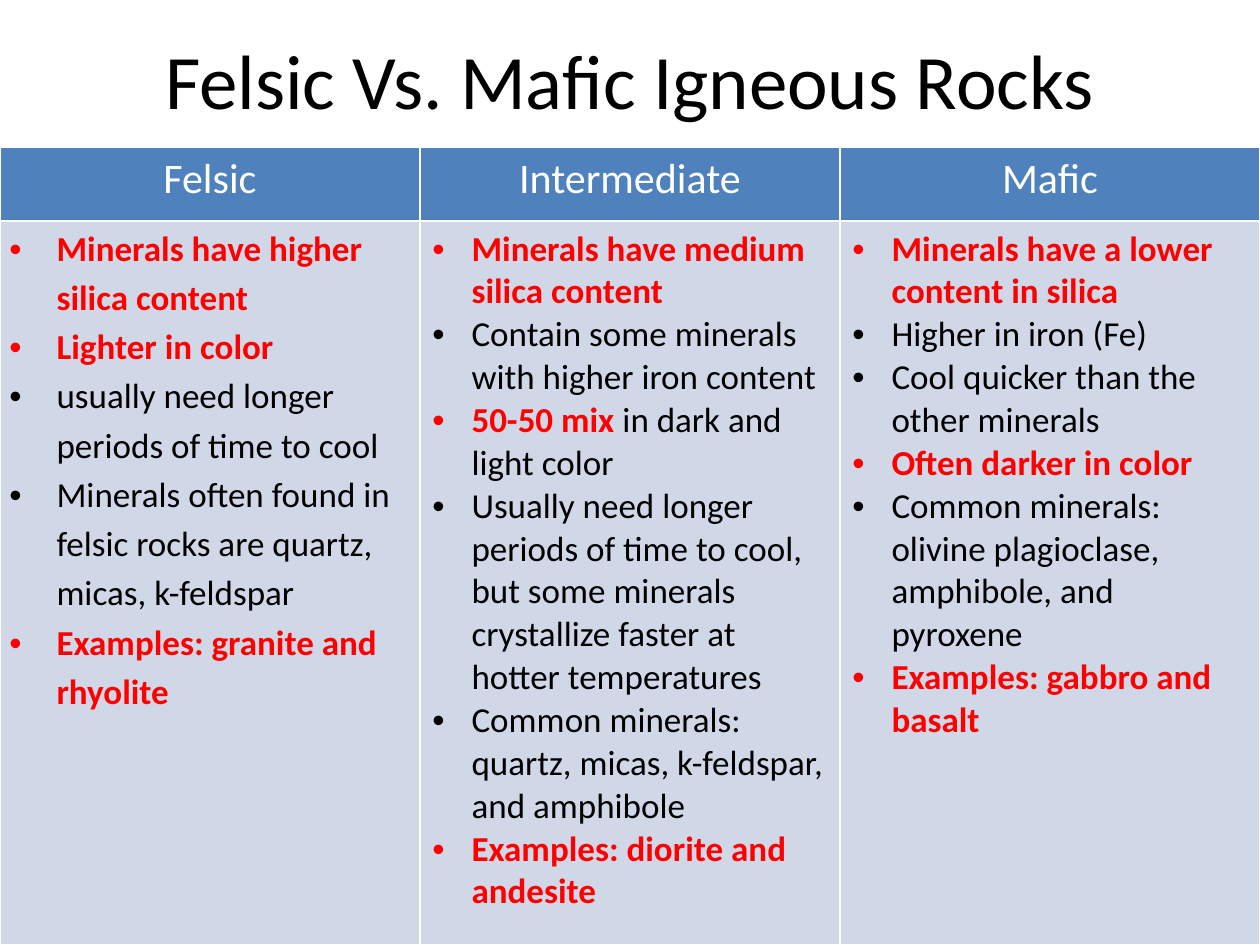
"""Build a slide with a table comparing felsic, intermediate and mafic rocks."""
from lxml import etree
from pptx import Presentation
from pptx.dml.color import RGBColor
from pptx.enum.text import MSO_ANCHOR, PP_ALIGN
from pptx.oxml.ns import qn
from pptx.util import Cm, Pt

CENTER, LEFT = PP_ALIGN.CENTER, PP_ALIGN.LEFT
MIDDLE = MSO_ANCHOR.MIDDLE
BLACK = RGBColor(0x00, 0x00, 0x00)
WHITE = RGBColor(0xFF, 0xFF, 0xFF)
RED = RGBColor(0xFF, 0x00, 0x00)
HEADER_BLUE = RGBColor(0x4F, 0x81, 0xBD)
BODY_BLUE = RGBColor(0xD0, 0xD8, 0xE8)
FONT = "Calibri"

TITLE = "Felsic Vs. Mafic Igneous Rocks"
KEY, PLAIN = True, False
ROCKS = [
    {"name": "Felsic", "indent": Cm(0.95), "spacing": 1.15, "margin": Cm(0.19), "top": Cm(0), "points": [
        [("Minerals have higher silica content", KEY)],
        [("Lighter in color", KEY)],
        [("usually need longer periods of time to cool", PLAIN)],
        [("Minerals often found in felsic rocks are quartz, micas, k-feldspar", PLAIN)],
        [("Examples: granite and rhyolite", KEY)],
    ]},
    {"name": "Intermediate", "indent": Cm(0.79), "spacing": 1.0, "margin": Cm(0.25), "top": Cm(0.13), "points": [
        [("Minerals have medium silica content", KEY)],
        [("Contain some minerals with higher iron content", PLAIN)],
        [("50-50 mix", KEY), (" in dark and light color", PLAIN)],
        [("Usually need longer periods of time to cool, but some minerals "
          "crystallize faster at hotter temperatures", PLAIN)],
        [("Common minerals: quartz, micas, k-feldspar, and amphibole", PLAIN)],
        [("Examples: diorite and andesite", KEY)],
    ]},
    {"name": "Mafic", "indent": Cm(0.79), "spacing": 1.0, "margin": Cm(0.25), "top": Cm(0.13), "points": [
        [("Minerals have a lower content in silica", KEY)],
        [("Higher in iron (Fe)", PLAIN)],
        [("Cool quicker than the other minerals", PLAIN)],
        [("Often darker in color", KEY)],
        [("Common minerals: olivine plagioclase, amphibole, and pyroxene", PLAIN)],
        [("Examples: gabbro and basalt", KEY)],
    ]},
]

SLIDE_WIDTH, SLIDE_HEIGHT = Cm(25.4), Cm(19.05)
TABLE_TOP, HEADER_HEIGHT = Cm(2.97), Cm(1.49)
BODY_HEIGHT = SLIDE_HEIGHT - TABLE_TOP - HEADER_HEIGHT


def add_text(paragraph, text, size=20, color=BLACK, bold=False, align=LEFT):
    paragraph.alignment = align
    run = paragraph.add_run()
    run.text = text
    run.font.name = FONT
    run.font.size = Pt(size)
    run.font.bold = bold
    run.font.color.rgb = color


def add_bullet(paragraph, indent):
    properties = paragraph._p.get_or_add_pPr()
    properties.set("marL", str(indent))
    properties.set("indent", str(-indent))
    etree.SubElement(properties, qn("a:buFont"), typeface="Arial")
    etree.SubElement(properties, qn("a:buChar"), char="•")


def add_borders(cell):
    properties = cell._tc.get_or_add_tcPr()
    for side in "LRTB":
        line = etree.SubElement(properties, qn(f"a:ln{side}"), w=str(Pt(1)))
        fill = etree.SubElement(line, qn("a:solidFill"))
        etree.SubElement(fill, qn("a:srgbClr"), val=str(WHITE))


def fill_cell(cell, color):
    cell.fill.solid()
    cell.fill.fore_color.rgb = color


def fill_body(cell, rock):
    add_borders(cell)
    fill_cell(cell, BODY_BLUE)
    cell.margin_left = cell.margin_right = rock["margin"]
    cell.margin_top = cell.margin_bottom = rock["top"]
    for index, runs in enumerate(rock["points"]):
        frame = cell.text_frame
        paragraph = frame.add_paragraph() if index else frame.paragraphs[0]
        paragraph.line_spacing = rock["spacing"]
        add_bullet(paragraph, rock["indent"])
        for text, is_key in runs:
            add_text(paragraph, text, color=RED if is_key else BLACK, bold=is_key)


def main():
    presentation = Presentation()
    presentation.slide_width, presentation.slide_height = SLIDE_WIDTH, SLIDE_HEIGHT
    slide = presentation.slides.add_slide(presentation.slide_layouts[6])

    title = slide.shapes.add_textbox(Cm(1.27), Cm(0), Cm(22.86), Cm(3.18))
    title.text_frame.word_wrap = True
    title.text_frame.vertical_anchor = MIDDLE
    add_text(title.text_frame.paragraphs[0], TITLE, size=44, align=CENTER)

    table = slide.shapes.add_table(2, len(ROCKS), Cm(0), TABLE_TOP, SLIDE_WIDTH,
                                   HEADER_HEIGHT + BODY_HEIGHT).table
    table.rows[0].height, table.rows[1].height = HEADER_HEIGHT, BODY_HEIGHT
    for column, rock in enumerate(ROCKS):
        header = table.cell(0, column)
        fill_cell(header, HEADER_BLUE)
        add_text(header.text_frame.paragraphs[0], rock["name"], size=24, color=WHITE, align=CENTER)
        fill_body(table.cell(1, column), rock)

    presentation.save("out.pptx")


if __name__ == "__main__":
    main()
